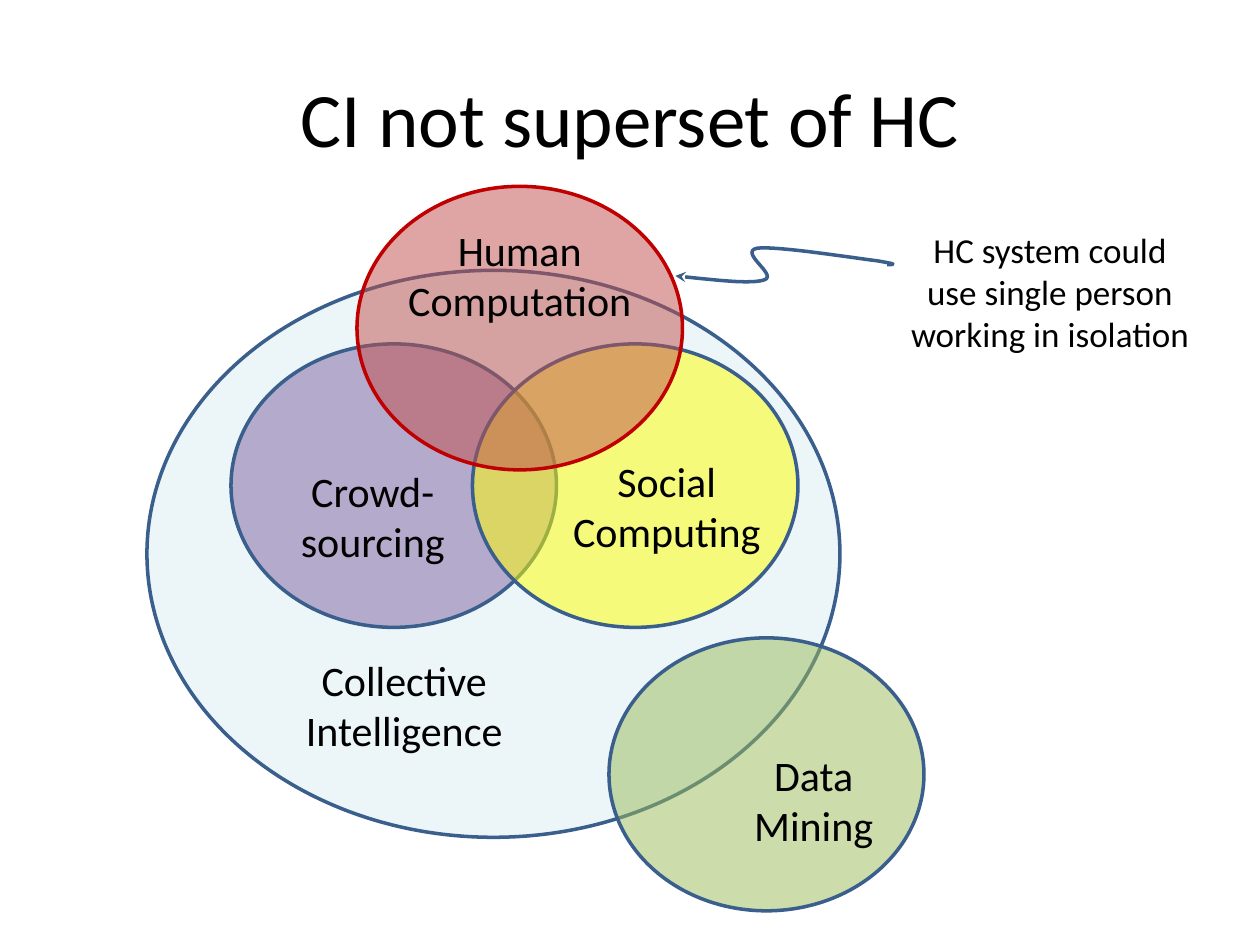
from typing import Any, NamedTuple

from lxml.etree import SubElement
from pptx import Presentation
from pptx.dml.color import RGBColor
from pptx.enum.shapes import MSO_SHAPE
from pptx.enum.text import MSO_ANCHOR, MSO_AUTO_SIZE, PP_ALIGN
from pptx.oxml.ns import qn
from pptx.util import Inches, Pt

WIDTH, HEIGHT = Inches(10), Inches(7.5)
COLUMNS, ROWS = 120, 90
ROW_SHIFT = -0.25
BLUE, RED, BLACK = "3A5F8C", "C00000", "000000"
OPACITY = 51
CURVE_STEPS = 16


class Box(NamedTuple):
    """A rectangle in grid columns and rows."""

    column: float
    row: float
    columns: float
    rows: float

    def lengths(self) -> tuple[int, int, int, int]:
        """Return left, top, width and height on the slide."""
        return (
            round(self.column * WIDTH / COLUMNS),
            round((self.row + ROW_SHIFT) * HEIGHT / ROWS),
            round(self.columns * WIDTH / COLUMNS),
            round(self.rows * HEIGHT / ROWS),
        )


class Field(NamedTuple):
    """An ellipse of the Venn diagram."""

    box: Box
    fill: str
    outline: str = BLUE


class Label(NamedTuple):
    """A centred text on the slide."""

    text: str
    box: Box
    size: int = 24
    anchor: MSO_ANCHOR = MSO_ANCHOR.TOP
    auto_size: MSO_AUTO_SIZE = MSO_AUTO_SIZE.SHAPE_TO_FIT_TEXT


CIRCLE = (31, 27)
LABEL = (25, 11)

FIELDS = [
    Field(Box(14, 26, 66, 54), "DBEEF4"),
    Field(Box(22, 33, *CIRCLE), "8064A2"),
    Field(Box(45, 33, *CIRCLE), "FFFF00"),
    Field(Box(34, 18, *CIRCLE), "C0504D", RED),
    Field(Box(58, 61, 30, 26), "9BBB59"),
]
FIELD_LABELS = [
    Label("Collective Intelligence", Box(26, 62, *LABEL)),
    Label("Crowd-\nsourcing", Box(23, 44, *LABEL)),
    Label("Human Computation", Box(37, 21, *LABEL)),
    Label("Social Computing", Box(51, 43, *LABEL)),
    Label("Data\nMining", Box(65, 71, *LABEL)),
]
TITLE = Label("CI not superset of HC", Box(6, 3.85, 108, 15), 44,
              MSO_ANCHOR.MIDDLE, MSO_AUTO_SIZE.NONE)
REMARK = Label("HC system could use single person working in isolation",
               Box(85, 21.4, 30, 13.3), 20)
SQUIGGLE = [
    (7.04, 2.1), (7.09, 2.1), (7.14, 2.1), (6.96, 2.07),
    (6.79, 2.05), (6.16, 1.95), (6.01, 1.97),
    (5.86, 2), (6.17, 2.18), (6.07, 2.22),
    (5.96, 2.26), (5.66, 2.22), (5.36, 2.19),
]


def color(value: str) -> RGBColor:
    """Turn a hex string into a colour."""
    return RGBColor.from_string(value)


def apply_format(target: Any, values: dict[str, Any]) -> None:
    """Set each named attribute on the target."""
    for name, value in values.items():
        setattr(target, name, value)


def draw_outline(shape: Any, outline: str) -> None:
    """Give a shape a plain two-point line."""
    shape.shadow.inherit = False
    shape.line.color.rgb = color(outline)
    shape.line.width = Pt(2)


def draw_field(shapes: Any, field: Field) -> None:
    """Draw one translucent ellipse."""
    shape = shapes.add_shape(MSO_SHAPE.OVAL, *field.box.lengths())
    shape.fill.solid()
    shape.fill.fore_color.rgb = color(field.fill)
    fill_color = shape.fill._xPr.find(qn("a:solidFill"))[0]
    SubElement(fill_color, qn("a:alpha"), val=str(OPACITY * 1000))
    draw_outline(shape, field.outline)


def draw_label(shapes: Any, label: Label) -> None:
    """Draw one centred text box."""
    frame = shapes.add_textbox(*label.box.lengths()).text_frame
    apply_format(frame, {
        "word_wrap": True,
        "auto_size": label.auto_size,
        "vertical_anchor": label.anchor,
    })
    paragraph = frame.paragraphs[0]
    paragraph.text = label.text.replace("\n", "\v")
    paragraph.alignment = PP_ALIGN.CENTER
    for run in paragraph.runs:
        apply_format(run.font, {"name": "Calibri", "size": Pt(label.size)})
        run.font.color.rgb = color(BLACK)


def curve_points(controls: list[tuple[float, float]]) -> list[tuple[int, int]]:
    """Sample joined cubic curves, given in inches, as slide points."""
    points = [controls[0]]
    for first in range(0, len(controls) - 1, 3):
        axes = list(zip(*controls[first:first + 4]))
        for step in range(1, CURVE_STEPS + 1):
            t = step / CURVE_STEPS
            weights = ((1 - t) ** 3, 3 * t * (1 - t) ** 2, 3 * t * t * (1 - t), t ** 3)
            points.append(tuple(sum(w * v for w, v in zip(weights, axis)) for axis in axes))
    return [(Inches(x), Inches(y)) for x, y in points]


def draw_squiggle(shapes: Any, controls: list[tuple[float, float]]) -> None:
    """Draw the wavy arrow from the remark to its ellipse."""
    start, *others = curve_points(controls)
    builder = shapes.build_freeform(*start)
    builder.add_line_segments(others, close=False)
    shape = builder.convert_to_shape()
    shape.fill.background()
    draw_outline(shape, BLUE)
    SubElement(shape.line._get_or_add_ln(), qn("a:tailEnd"), type="stealth")


def main() -> None:
    """Build the slide and save it."""
    presentation = Presentation()
    apply_format(presentation, {"slide_width": WIDTH, "slide_height": HEIGHT})
    slide = presentation.slides.add_slide(presentation.slide_layouts[6])
    draw_label(slide.shapes, TITLE)
    diagram = slide.shapes.add_group_shape()
    for field in FIELDS:
        draw_field(diagram.shapes, field)
    for label in FIELD_LABELS:
        draw_label(diagram.shapes, label)
    draw_squiggle(slide.shapes, SQUIGGLE)
    draw_label(slide.shapes, REMARK)
    presentation.save("out.pptx")


if __name__ == "__main__":
    main()
